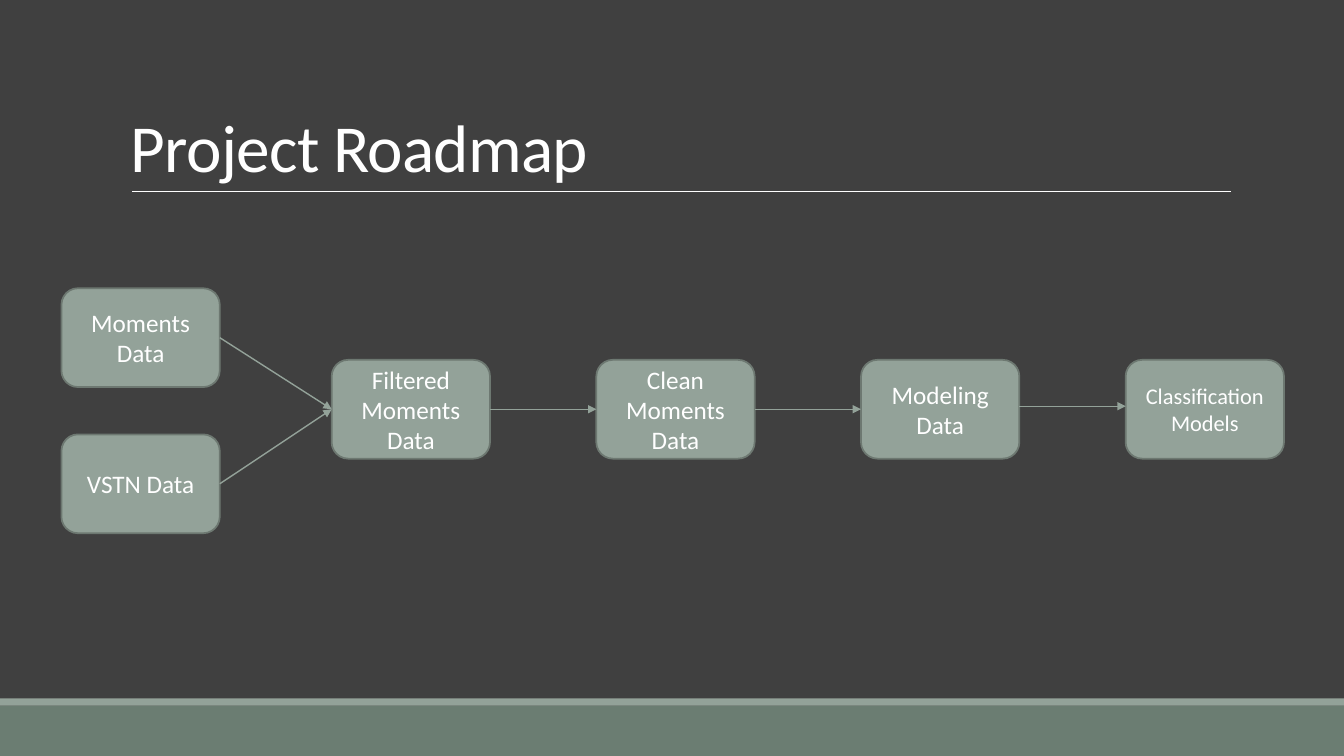
from lxml import etree
from pptx import Presentation
from pptx import util as u
from pptx.dml.color import RGBColor
from pptx.enum import shapes, text
from pptx.oxml.ns import qn

SAGE, WHITE = "93A299", "FFFFFF"


def rgb(color, value):
    color.rgb = RGBColor.from_string(value)


def write(tf, content, size=18, align=text.PP_ALIGN.CENTER,
          anchor=text.MSO_ANCHOR.MIDDLE, line_spacing=None, tracking=None):
    tf.word_wrap = True
    tf.vertical_anchor = anchor
    for i, line in enumerate(content.split("\n")):
        p = tf.add_paragraph() if i else tf.paragraphs[0]
        p.alignment = align
        p.line_spacing = line_spacing
        r = p.add_run()
        r.text = line
        r.font.name = "Calibri"
        r.font.size = u.Pt(size)
        rgb(r.font.color, WHITE)
        if tracking is not None:
            r.font._element.set("spc", str(round(tracking * 100)))


prs = Presentation()
prs.slide_width, prs.slide_height = u.Inches(13.33), u.Inches(7.5)
s = prs.slides.add_slide(prs.slide_layouts[6])
s.background.fill.solid()
rgb(s.background.fill.fore_color, "404040")

for top, height, color in [(7, 0.5, "6B7D72"), (6.93, 0.07, SAGE)]:
    sp = s.shapes.add_shape(shapes.MSO_SHAPE.RECTANGLE, 0, u.Inches(top),
                            prs.slide_width, u.Inches(height))
    sp.shadow.inherit = False
    sp.fill.solid()
    rgb(sp.fill.fore_color, color)
    sp.line.fill.background()

title = s.shapes.add_textbox(u.Inches(1.2), u.Inches(0.31), u.Inches(11), u.Inches(1.59))
write(title.text_frame, "Project Roadmap", size=48, align=text.PP_ALIGN.LEFT,
      anchor=text.MSO_ANCHOR.BOTTOM, line_spacing=0.85, tracking=-0.5)

BOX_W, BOX_H = 1.57, 0.98
FLOW_X, FLOW_Y, STEP = 3.29, 3.57, 2.625
boxes = [("Moments Data", 0.61, 2.86, 18), ("VSTN Data", 0.61, 4.31, 18)]
flow = [("Filtered\nMoments Data", 18), ("Clean\nMoments Data", 18),
        ("Modeling Data", 18), ("Classification Models", 16)]
boxes += [(label, FLOW_X + i * STEP, FLOW_Y, size) for i, (label, size) in enumerate(flow)]

nodes = []
for label, left, top, size in boxes:
    sp = s.shapes.add_shape(shapes.MSO_SHAPE.ROUNDED_RECTANGLE, u.Inches(left),
                            u.Inches(top), u.Inches(BOX_W), u.Inches(BOX_H))
    sp.shadow.inherit = False
    sp.fill.solid()
    rgb(sp.fill.fore_color, SAGE)
    rgb(sp.line.color, "6D7871")
    sp.line.width = u.Pt(1.25)
    write(sp.text_frame, label, size=size)
    nodes.append(sp)

modeling, models = nodes[-2:]
last_y = u.Inches(4.03)
lines = [(u.Inches(1.31), u.Inches(1.9), u.Inches(12.21), u.Inches(1.9), None),
         (modeling.left + modeling.width, last_y, models.left, last_y, None)]
lines += [(0, 0, 0, 0, link) for link in [(0, 2), (1, 2), (2, 3), (3, 4)]]

for i, (x1, y1, x2, y2, link) in enumerate(lines):
    c = s.shapes.add_connector(shapes.MSO_CONNECTOR.STRAIGHT, x1, y1, x2, y2)
    if link:
        c.begin_connect(nodes[link[0]], 3)
        c.end_connect(nodes[link[1]], 1)
    is_rule = i == 0
    rgb(c.line.color, WHITE if is_rule else SAGE)
    c.line.width = u.Pt(0.5 if is_rule else 1)
    if not is_rule:
        etree.SubElement(c.line._get_or_add_ln(), qn("a:tailEnd"), type="triangle")
    etree.SubElement(c._element.spPr, qn("a:effectLst"))

prs.save("out.pptx")
